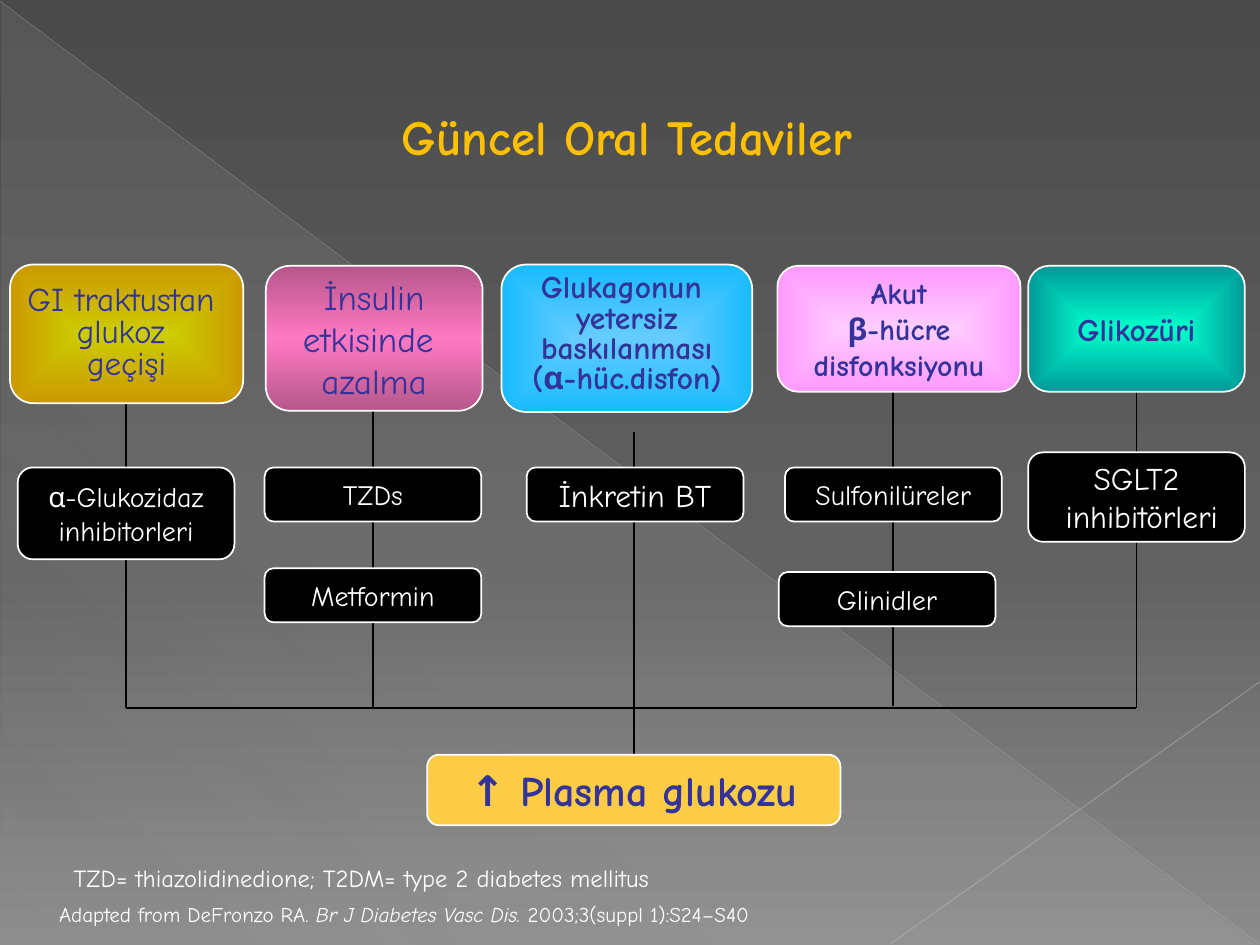
from dataclasses import dataclass
from typing import Optional

from lxml import etree
from pptx import Presentation
from pptx.dml.color import RGBColor
from pptx.enum.shapes import MSO_CONNECTOR, MSO_SHAPE
from pptx.enum.text import MSO_ANCHOR, PP_ALIGN
from pptx.oxml.ns import qn
from pptx.util import Inches, Pt

STRAIGHT = MSO_CONNECTOR.STRAIGHT
BOX, TRIANGLE = MSO_SHAPE.FLOWCHART_ALTERNATE_PROCESS, MSO_SHAPE.RIGHT_TRIANGLE
MIDDLE, TOP = MSO_ANCHOR.MIDDLE, MSO_ANCHOR.TOP
CENTER, LEFT = PP_ALIGN.CENTER, PP_ALIGN.LEFT


@dataclass(frozen=True)
class Theme:
    font: str = "Comic Neue"
    title: str = "FFC000"
    ink: str = "333399"
    white: str = "FFFFFF"
    black: str = "000000"
    result: str = "FCCC46"
    veil: str = "D2D2D2"
    title_size: int = 28
    result_size: int = 24
    drug_size: int = 16
    large_drug_size: int = 18
    note_size: int = 14
    source_size: int = 12


@dataclass(frozen=True)
class Gradient:
    stops: tuple
    angle: Optional[int] = None


@dataclass(frozen=True)
class Box:
    text: str
    left: float
    top: float
    width: float
    height: float
    fill: "str | Gradient"
    size: int
    color: str
    bold: bool = False
    spacing: Optional[float] = None
    inset_top: float = 0.05


@dataclass(frozen=True)
class Line:
    x1: float
    y1: float
    x2: float
    y2: float
    color: str = "000000"
    width: float = 1
    opacity: int = 100


THEME = Theme()
BUS_Y = 5.62
DRUG_W, DRUG_H, DRUG_Y = 1.72, 0.43, 3.71


def radial(center: str, edge: str) -> Gradient:
    return Gradient(((0, center, 100), (100, edge, 100)))


def cause(text, left, top, width, height, fill, size, **fmt) -> Box:
    return Box(text, left, top, width, height, fill, size, THEME.ink, **fmt)


def drug(text, left, top=DRUG_Y, height=DRUG_H, size=THEME.drug_size) -> Box:
    return Box(text, left, top, DRUG_W, height, THEME.black, size, THEME.white)


BACKGROUND = Gradient(((0, "4A4A4A", 100), (60, "626262", 100), (100, "8C8C8C", 100)), 90)
VEIL = Gradient(((0, THEME.veil, 10), (70, THEME.veil, 8), (100, THEME.veil, 1)), 133)
PINK = Gradient(((0, "B6578B", 100), (50, "FF79C2", 100), (100, "B6578B", 100)), 90)

DECOR_LINES = [
    Line(0, 0.01, 9.99, 7.49, "BFBFBF", 0.39, 35),
    Line(10, 5.41, 7.07, 7.49, "C6C6C6", 0.47, 45),
]
STEMS = [(1, 3.02, BUS_Y), (2.96, 3.03, BUS_Y), (5.03, 3.43, 6.08),
         (7.09, 3.05, 5.6), (9.02, 2.88, BUS_Y)]
BOXES = [
    cause("GI traktustan \nglukoz \ngeçişi", 0.08, 2.1, 1.85, 1.1,
          radial("CCCC00", "CC9900"), 19, spacing=0.8),
    cause("İnsulin\netkisinde \nazalma", 2.11, 2.11, 1.72, 1.15, PINK, 20),
    cause("Glukagonun \nyetersiz\nbaskılanması\n(α-hüc.disfon)", 3.98, 2.1, 1.99, 1.17,
          radial("66CCFF", "17BBFD"), 18, bold=True, spacing=0.8, inset_top=0),
    cause("Akut\vβ-hücre\vdisfonksiyonu", 6.17, 2.11, 1.93, 1,
          radial("FFCCFF", "FF99FF"), 17, bold=True),
    cause("Glikozüri", 8.16, 2.11, 1.72, 1, radial("00FFCC", "009999"), 18, bold=True),
    drug("α-Glukozidaz\vinhibitorleri", 0.14, height=0.73),
    drug("TZDs", 2.1),
    drug("Metformin", 2.1, top=4.51),
    drug("İnkretin BT", 4.18, size=THEME.large_drug_size),
    drug("Sulfonilüreler", 6.23),
    drug("Glinidler", 6.18, top=4.54),
    drug("SGLT2\n inhibitörleri", 8.16, 3.59, 0.71, THEME.large_drug_size),
    Box("↑ Plasma glukozu", 3.39, 5.99, 3.28, 0.56, THEME.result,
        THEME.result_size, THEME.ink, bold=True),
]


def set_alpha(color, opacity: int) -> None:
    if opacity < 100:
        etree.SubElement(color, qn("a:alpha"), val=str(opacity * 1000))


def apply_fill(fill, owner, value) -> None:
    fill.solid()
    if isinstance(value, str):
        fill.fore_color.rgb = RGBColor.from_string(value)
        return
    grad = etree.Element(qn("a:gradFill"), rotWithShape="1")
    stops = etree.SubElement(grad, qn("a:gsLst"))
    for pos, rgb, opacity in value.stops:
        stop = etree.SubElement(stops, qn("a:gs"), pos=str(pos * 1000))
        set_alpha(etree.SubElement(stop, qn("a:srgbClr"), val=rgb), opacity)
    if value.angle is None:
        center = etree.SubElement(grad, qn("a:path"), {"path": "shape"})
        etree.SubElement(center, qn("a:fillToRect"), l="50000", t="50000", r="50000", b="50000")
    else:
        etree.SubElement(grad, qn("a:lin"), ang=str(value.angle * 60000), scaled="0")
    solid = next(owner.iter(qn("a:solidFill")))
    solid.getparent().replace(solid, grad)


def write(sp, text: str, *, size: int, color: str, bold=False, align=CENTER, anchor=MIDDLE,
          spacing=None, wrap=False, inset_left=0.1, inset_top=0.05) -> None:
    tf = sp.text_frame
    tf.word_wrap = wrap
    tf.vertical_anchor = anchor
    tf.margin_left, tf.margin_right = Inches(inset_left), Inches(0.1)
    tf.margin_top, tf.margin_bottom = Inches(inset_top), Inches(0.05)
    for n, line in enumerate(text.split("\n")):
        p = tf.add_paragraph() if n else tf.paragraphs[0]
        p.alignment = align
        p.line_spacing = spacing
        for i, part in enumerate(line.split("*")):
            for k, piece in enumerate(part.split("\v")):
                if k:
                    p.add_line_break()
                r = p.add_run()
                r.text = piece
                r.font.name, r.font.size = THEME.font, Pt(size)
                r.font.bold, r.font.italic = bold, i % 2 == 1
                r.font.color.rgb = RGBColor.from_string(color)


def draw_line(slide, line: Line) -> None:
    cx = slide.shapes.add_connector(
        STRAIGHT, Inches(line.x1), Inches(line.y1), Inches(line.x2), Inches(line.y2))
    cx.line.width = Pt(line.width)
    cx.line.color.rgb = RGBColor.from_string(line.color)
    set_alpha(next(cx._element.iter(qn("a:srgbClr"))), line.opacity)
    etree.SubElement(cx._element.spPr, qn("a:effectLst"))


def add_filled(slide, kind, left, top, width, height, fill):
    sp = slide.shapes.add_shape(kind, Inches(left), Inches(top), Inches(width), Inches(height))
    sp.shadow.inherit = False
    apply_fill(sp.fill, sp._element, fill)
    return sp


def draw_box(slide, box: Box) -> None:
    sp = add_filled(slide, BOX, box.left, box.top, box.width, box.height, box.fill)
    sp.line.color.rgb = RGBColor.from_string(THEME.white)
    sp.line.width = Pt(1)
    write(sp, box.text, size=box.size, color=box.color, bold=box.bold,
          spacing=box.spacing, inset_top=box.inset_top)


def draw_note(slide, text, left, top, width, height, **fmt) -> None:
    sp = slide.shapes.add_textbox(Inches(left), Inches(top), Inches(width), Inches(height))
    write(sp, text, color=THEME.white, **fmt)


def main() -> None:
    prs = Presentation()
    prs.slide_width, prs.slide_height = Inches(10), Inches(7.5)
    slide = prs.slides.add_slide(prs.slide_layouts[5])
    apply_fill(slide.background.fill, slide._element, BACKGROUND)
    add_filled(slide, TRIANGLE, 0.01, 0.02, 9.98, 7.48, VEIL).line.fill.background()

    title = slide.shapes.title
    title.left, title.top = Inches(2.56), Inches(0.45)
    title.width, title.height = Inches(8.5), Inches(1.25)
    write(title, "Güncel Oral Tedaviler", size=THEME.title_size, color=THEME.title,
          bold=True, align=LEFT, wrap=True, inset_left=0.63)

    stems = [Line(x, top, x, bottom) for x, top, bottom in STEMS]
    bus = Line(STEMS[0][0], BUS_Y, STEMS[-1][0], BUS_Y)
    for line in [*DECOR_LINES, *stems, bus]:
        draw_line(slide, line)
    for box in BOXES:
        draw_box(slide, box)

    draw_note(slide, "TZD= thiazolidinedione; T2DM= type 2 diabetes mellitus",
              0.22, 6.8, 5.3, 0.33, size=THEME.note_size)
    draw_note(slide, "Adapted from DeFronzo RA. *Br J Diabetes Vasc Dis. *2003;3(suppl 1):S24–S40",
              0.37, 7.11, 6.31, 0.3, size=THEME.source_size, align=LEFT, anchor=TOP)
    prs.save("out.pptx")


if __name__ == "__main__":
    main()
